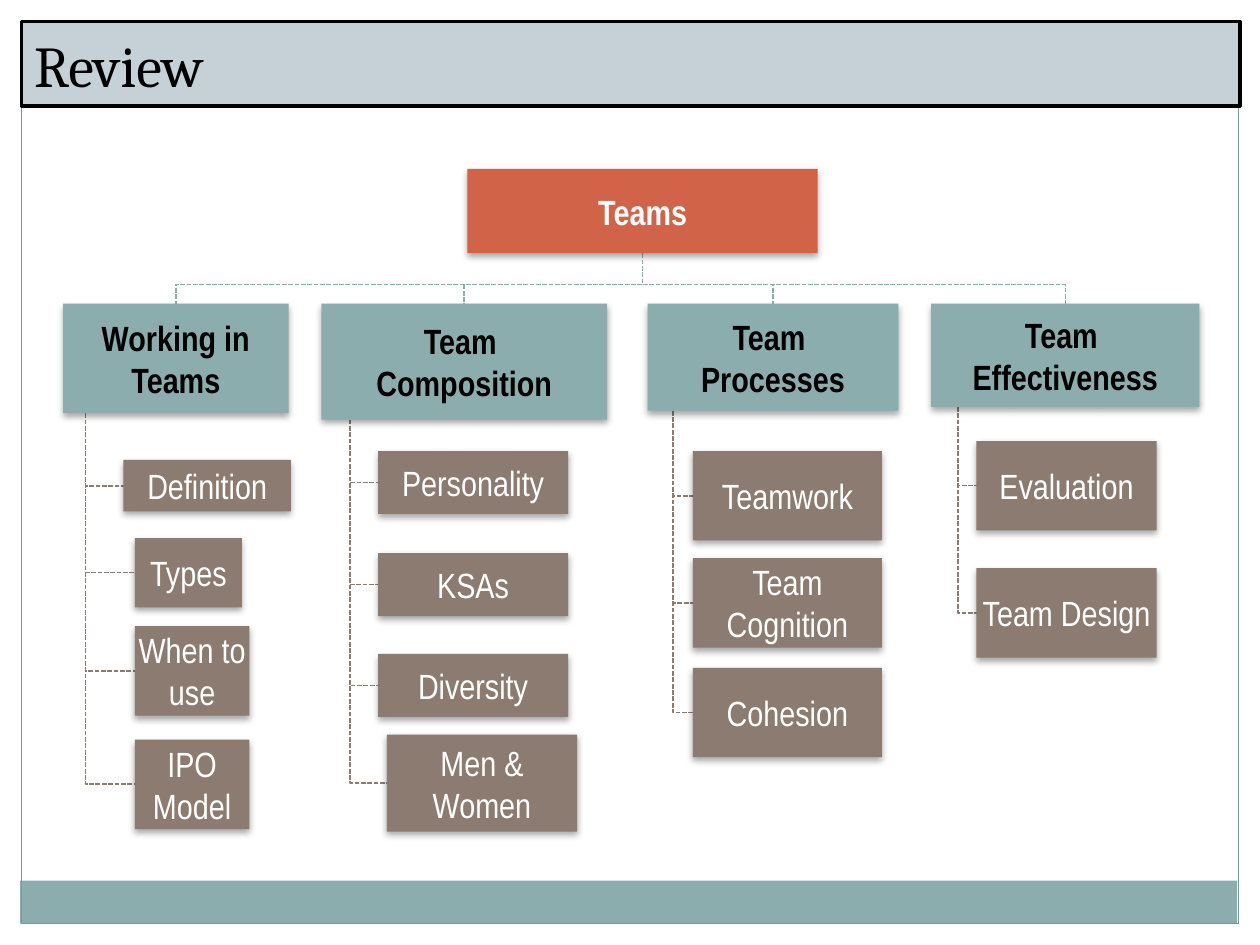
from pptx import Presentation
from pptx.dml.color import RGBColor
from pptx.enum.dml import MSO_LINE
from pptx.enum.shapes import MSO_SHAPE
from pptx.enum.text import MSO_ANCHOR, MSO_AUTO_SIZE, PP_ALIGN
from pptx.oxml import parse_xml
from pptx.oxml.ns import nsdecls, qn
from pptx.util import Inches, Pt

RECT = MSO_SHAPE.RECTANGLE
DASH = MSO_LINE.SQUARE_DOT
MIDDLE, BOTTOM = MSO_ANCHOR.MIDDLE, MSO_ANCHOR.BOTTOM
LEFT, CENTER = PP_ALIGN.LEFT, PP_ALIGN.CENTER
FIXED = MSO_AUTO_SIZE.NONE

HUES = {
    "root": "D16349",
    "head": "8CADAE",
    "leaf": "8C7B70",
    "frame": "7C999A",
    "title": "C5D1D7",
    "white": "FFFFFF",
    "black": "000000",
}

INSET = Inches(0.01)
FRAME = {
    "word_wrap": True,
    "vertical_anchor": MIDDLE,
    "margin_left": INSET,
    "margin_right": INSET,
    "margin_top": INSET,
    "margin_bottom": INSET,
}
PLAIN = {"name": "Arial Narrow", "size": Pt(20), "bold": False}
BOLD = {**PLAIN, "bold": True}

ROOT = (3.71, 1.34, 2.78, 0.67)
BAR_Y = 2.26
HEAD_Y = 2.41
TRUNK = 0.1

GROUPS = [
    ("Working in Teams", 0.5, 1.79, 0.87, [
        ("Definition", 0.98, 3.65, 1.33, 0.41),
        ("Types", 1.07, 4.27, 0.85, 0.55),
        ("When to use", 1.07, 4.97, 0.91, 0.71),
        ("IPO Model", 1.07, 5.87, 0.91, 0.71),
    ]),
    ("Team \nComposition", 2.55, 2.27, 0.92, [
        ("Personality", 3, 3.58, 1.51, 0.5),
        ("KSAs", 3, 4.39, 1.51, 0.5),
        ("Diversity", 3, 5.19, 1.51, 0.5),
        ("Men & Women", 3.07, 5.83, 1.51, 0.77),
    ]),
    ("Team \nProcesses", 5.14, 1.99, 0.85, [
        ("Teamwork", 5.5, 3.58, 1.5, 0.71),
        ("Team Cognition", 5.5, 4.43, 1.5, 0.71),
        ("Cohesion", 5.5, 5.3, 1.5, 0.71),
    ]),
    ("Team \nEffectiveness", 7.39, 2.13, 0.82, [
        ("Evaluation", 7.75, 3.5, 1.43, 0.71),
        ("Team Design", 7.75, 4.51, 1.43, 0.71),
    ]),
]


def hue(key):
    return RGBColor.from_string(HUES[key])


def apply(target, values):
    for name, value in values.items():
        setattr(target, name, value)


def paint(shape, fill=None, line=None, width=1):
    if fill:
        shape.fill.solid()
        shape.fill.fore_color.rgb = hue(fill)
    else:
        shape.fill.background()
    if line:
        shape.line.color.rgb = hue(line)
        shape.line.width = Pt(width)
    else:
        shape.line.fill.background()


def write(shape, text, frame, font, ink, align):
    body = shape.text_frame
    body.text = text
    apply(body, frame)
    for para in body.paragraphs:
        para.alignment = align
        for run in para.runs:
            apply(run.font, font)
            run.font.color.rgb = hue(ink)


def add_rect(slide, box, **look):
    shape = slide.shapes.add_shape(RECT, *map(Inches, box))
    shape.shadow.inherit = False
    paint(shape, **look)
    return shape


def add_shade(shape):
    shade = parse_xml(
        f'<a:outerShdw {nsdecls("a")} blurRad="{Pt(4)}" dist="{Pt(2)}" '
        'dir="5400000" rotWithShape="0"><a:srgbClr val="000000">'
        '<a:alpha val="35000"/></a:srgbClr></a:outerShdw>'
    )
    shape.element.spPr.find(qn("a:effectLst")).append(shade)


def add_node(slide, text, box, fill, font, ink):
    shape = add_rect(slide, box, fill=fill)
    add_shade(shape)
    write(shape, text, FRAME, font, ink, CENTER)


def add_link(slide, points, line):
    start, *rest = [(Inches(x), Inches(y)) for x, y in points]
    path = slide.shapes.build_freeform(*start)
    path.add_line_segments(rest, close=False)
    shape = path.convert_to_shape()
    shape.shadow.inherit = False
    paint(shape, line=line, width=0.9)
    shape.line.dash_style = DASH


def link_group(slide, left, width, height, leaves):
    x, y, w, h = ROOT
    top, mid = x + w / 2, left + width / 2
    add_link(slide, [(top, y + h), (top, BAR_Y), (mid, BAR_Y), (mid, HEAD_Y)], "head")
    trunk = left + TRUNK * width
    for _, x, y, w, h in leaves:
        mid = y + h / 2
        add_link(slide, [(trunk, HEAD_Y + height), (trunk, mid), (x, mid)], "leaf")


def add_tree(slide):
    for _, left, width, height, leaves in GROUPS:
        link_group(slide, left, width, height, leaves)
    add_node(slide, "Teams", ROOT, "root", BOLD, "white")
    for text, left, width, height, leaves in GROUPS:
        add_node(slide, text, (left, HEAD_Y, width, height), "head", BOLD, "black")
        for label, *box in leaves:
            add_node(slide, label, box, "leaf", PLAIN, "white")


def add_title(slide, text):
    title = slide.shapes.title
    box = dict(zip(("left", "top", "width", "height"), map(Inches, (0.17, 0.17, 9.67, 0.67))))
    apply(title, box)
    paint(title, fill="title", line="black", width=2)
    frame = {"word_wrap": True, "vertical_anchor": BOTTOM, "auto_size": FIXED}
    font = {"name": "Cambria", "size": Pt(33), "bold": False}
    write(title, text, frame, font, "black", LEFT)
    title.element.getparent().append(title.element)


def main():
    deck = Presentation()
    apply(deck, {"slide_width": Inches(10), "slide_height": Inches(7.5)})
    slide = deck.slides.add_slide(deck.slide_layouts[5])
    add_rect(slide, (0.16, 6.99, 9.66, 0.34), fill="head")
    add_rect(slide, (0.17, 0.17, 9.66, 7.16), line="frame", width=0.75)
    add_tree(slide)
    add_title(slide, "Review")
    deck.save("out.pptx")


if __name__ == "__main__":
    main()
